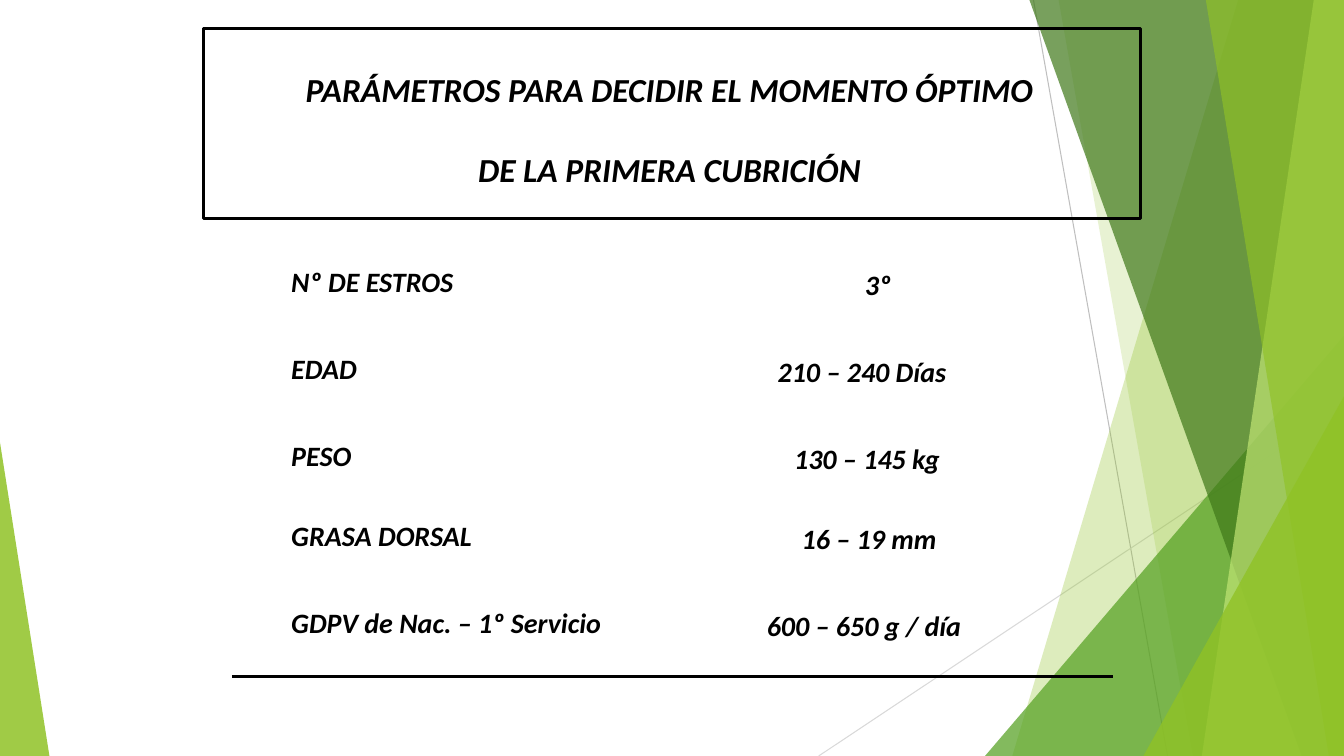
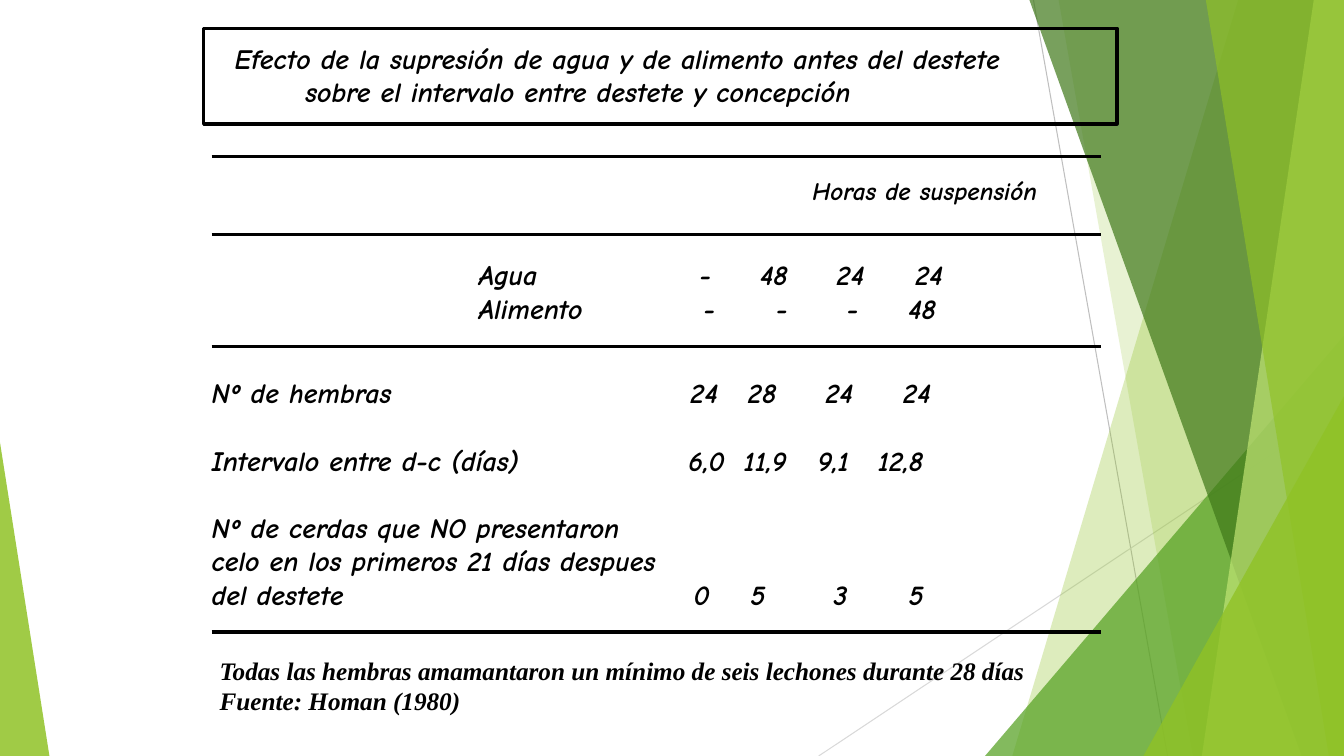
from lxml import etree
from pptx import Presentation
from pptx.dml.color import RGBColor
from pptx.enum import shapes, text
from pptx.oxml.ns import qn
from pptx.util import Emu, Pt

PX = 9144  # 100 px to the inch
WIDTH, HEIGHT = 1333, 750

BLACK = RGBColor(0x00, 0x00, 0x00)
LIME = RGBColor(0x90, 0xC2, 0x26)
PALE_LIME = RGBColor(0xC0, 0xE4, 0x74)
GREEN = RGBColor(0x54, 0xA0, 0x21)
DARK_GREEN = RGBColor(0x3F, 0x78, 0x19)
GREY = RGBColor(0xBF, 0xBF, 0xBF)
LIGHT_GREY = RGBColor(0xD9, 0xD9, 0xD9)

SANS, COMIC, SERIF = "Calibri", "Comic Neue", "Times New Roman"
LEFT, CENTER = text.PP_ALIGN.LEFT, text.PP_ALIGN.CENTER

# Shared decoration
HAIRLINES = [(1025, 0, 1158, 750, GREY), (1333, 403, 812, 750, LIGHT_GREY)]
# Bands reach the right edge: top x, bottom x, colour, opacity %
BANDS_BACK = [(1228, 1004, LIME, 30), (1050, 1183, LIME, 20)]
BANDS_FRONT = [(1021, 1291, DARK_GREEN, 70), (1303, 1192, PALE_LIME, 70),
               (1196, 1318, LIME, 65)]
# Triangles stand on the bottom edge: left, top, width, apex, colour, opacity %
TRIANGLE_BACK = [(977, 333, 356, 1, GREEN, 72)]
TRIANGLES_FRONT = [(1134, 393, 199, 1, LIME, 80), (0, 439, 49, 0, LIME, 85)]

# Slide 1: label, label top, value, value centre
MATING_TITLE = ["PARÁMETROS PARA DECIDIR EL MOMENTO ÓPTIMO",
                "DE LA PRIMERA CUBRICIÓN"]
PARAMETERS = [
    ("Nº DE ESTROS", 257, "3º", 871),
    ("EDAD", 344, "210 – 240 Días", 855),
    ("PESO", 430, "130 – 145 kg", 860),
    ("GRASA DORSAL", 509, "16 – 19 mm", 862),
    ("GDPV de Nac. – 1º Servicio", 596, "600 – 650 g / día", 857),
]

# Slide 2: each line is its text, then the x of every tabbed part
WEANING_TITLE = [
    ("Efecto de la supresión de agua y de alimento antes del destete",),
    ("\tsobre el intervalo entre destete y concepción", 303),
]
TREATMENTS = [
    ("Agua\t-\t48\t24\t24", 694, 754, 830, 908),
    ("Alimento\t-\t-\t-\t48", 698, 770, 840, 901),
]
RESULTS = [
    ("Nº de hembras\t24\t28\t24\t24", 685, 742, 819, 896),
    ("Intervalo entre d-c (días)\t6,0\t11,9\t9,1\t12,8", 683, 738, 811, 871),
    ("Nº de cerdas que NO presentaron",),
    ("celo en los primeros 21 días despues",),
    ("del destete\t0\t5\t3\t5", 688, 744, 827, 901),
]
NOTES = ["Todas las hembras amamantaron un mínimo de seis lechones durante 28 días",
         "Fuente: Homan (1980)"]
TABLE_RULES = [155, 233, 344, 627]


def px(*lengths):
    return [Emu(n * PX) for n in lengths]


def add_line(parent, x1, y1, x2, y2, color, width):
    c = parent.add_connector(shapes.MSO_CONNECTOR.STRAIGHT, *px(x1, y1, x2, y2))
    c.line.color.rgb = color
    c.line.width = Pt(width)
    etree.SubElement(c._element.spPr, qn("a:effectLst"))


def paint(shape, color, opacity):
    shape.shadow.inherit = False
    shape.fill.solid()
    shape.fill.fore_color.rgb = color
    shape.line.fill.background()
    clr = shape._element.spPr.find(".//" + qn("a:srgbClr"))
    etree.SubElement(clr, qn("a:alpha"), val=str(opacity * 1000))


def add_bands(parent, bands):
    for top_x, bottom_x, color, opacity in bands:
        outline = parent.build_freeform(top_x, 0, scale=PX)
        outline.add_line_segments([(WIDTH, 0), (WIDTH, HEIGHT), (bottom_x, HEIGHT)])
        paint(outline.convert_to_shape(), color, opacity)


def add_triangles(parent, triangles):
    for x, y, w, apex, color, opacity in triangles:
        shape = parent.add_shape(shapes.MSO_SHAPE.ISOSCELES_TRIANGLE,
                                 *px(x, y, w, HEIGHT - y))
        shape.adjustments[0] = apex
        paint(shape, color, opacity)


def add_slide(prs):
    s = prs.slides.add_slide(prs.slide_layouts[6])
    group = s.shapes.add_group_shape().shapes
    for hairline in HAIRLINES:
        add_line(group, *hairline, 0.75)
    add_bands(group, BANDS_BACK)
    add_triangles(group, TRIANGLE_BACK)
    add_bands(group, BANDS_FRONT)
    add_triangles(group, TRIANGLES_FRONT)
    return s


def add_frame(s, x, y, w, h):
    sp = s.shapes.add_shape(shapes.MSO_SHAPE.RECTANGLE, *px(x, y, w, h))
    sp.shadow.inherit = False
    sp.fill.background()
    sp.line.color.rgb = BLACK
    sp.line.width = Pt(2.25)


def add_text(s, x, y, w, h, lines, font, size, align=LEFT, gaps=None):
    """Lines are strings or (text, tab x...); gaps maps line index to points before."""
    tf = s.shapes.add_textbox(*px(x, y, w, h)).text_frame
    tf.word_wrap = True
    for i, line in enumerate(lines):
        content, *stops = (line,) if isinstance(line, str) else line
        p = tf.add_paragraph() if i else tf.paragraphs[0]
        p.text = content
        p.alignment = align
        if gaps and i in gaps:
            p.space_before = Pt(gaps[i])
        if stops:
            tabs = etree.SubElement(p._p.get_or_add_pPr(), qn("a:tabLst"))
            for stop in stops:
                offset = (stop - x) * PX - tf.margin_left
                etree.SubElement(tabs, qn("a:tab"), pos=str(offset), algn="l")
        for r in p.runs:
            r.font.name, r.font.size = font, Pt(size)
            r.font.bold = r.font.italic = True
            r.font.color.rgb = BLACK


def build_mating(prs):
    s = add_slide(prs)
    add_text(s, 280, 63, 768, 172, MATING_TITLE, SANS, 24, CENTER, {1: 29})
    add_frame(s, 202, 28, 929, 189)
    for label, top, value, center in PARAMETERS:
        add_text(s, 279, top, 400, 44, [label], SANS, 20)
        add_text(s, center - 130, top + 3, 260, 44, [value], SANS, 20, CENTER)
    add_line(s.shapes, 230, 671, 1104, 671, BLACK, 2.25)


def build_weaning(prs):
    s = add_slide(prs)
    add_text(s, 223, 36, 880, 77, WEANING_TITLE, COMIC, 20)
    add_frame(s, 202, 28, 906, 95)
    add_text(s, 796, 169, 290, 40, ["Horas de suspensión"], COMIC, 18)
    add_text(s, 465, 251, 625, 77, TREATMENTS, COMIC, 20)
    add_text(s, 200, 368, 889, 243, RESULTS, COMIC, 20, gaps={1: 24, 2: 24})
    for y in TABLE_RULES:
        add_line(s.shapes, 210, y, 1092, y, BLACK, 2.25)
    add_text(s, 208, 645, 860, 70, NOTES, SERIF, 18)


def main():
    prs = Presentation()
    prs.slide_width, prs.slide_height = px(WIDTH, HEIGHT)
    build_mating(prs)
    build_weaning(prs)
    prs.save("out.pptx")


if __name__ == "__main__":
    main()
